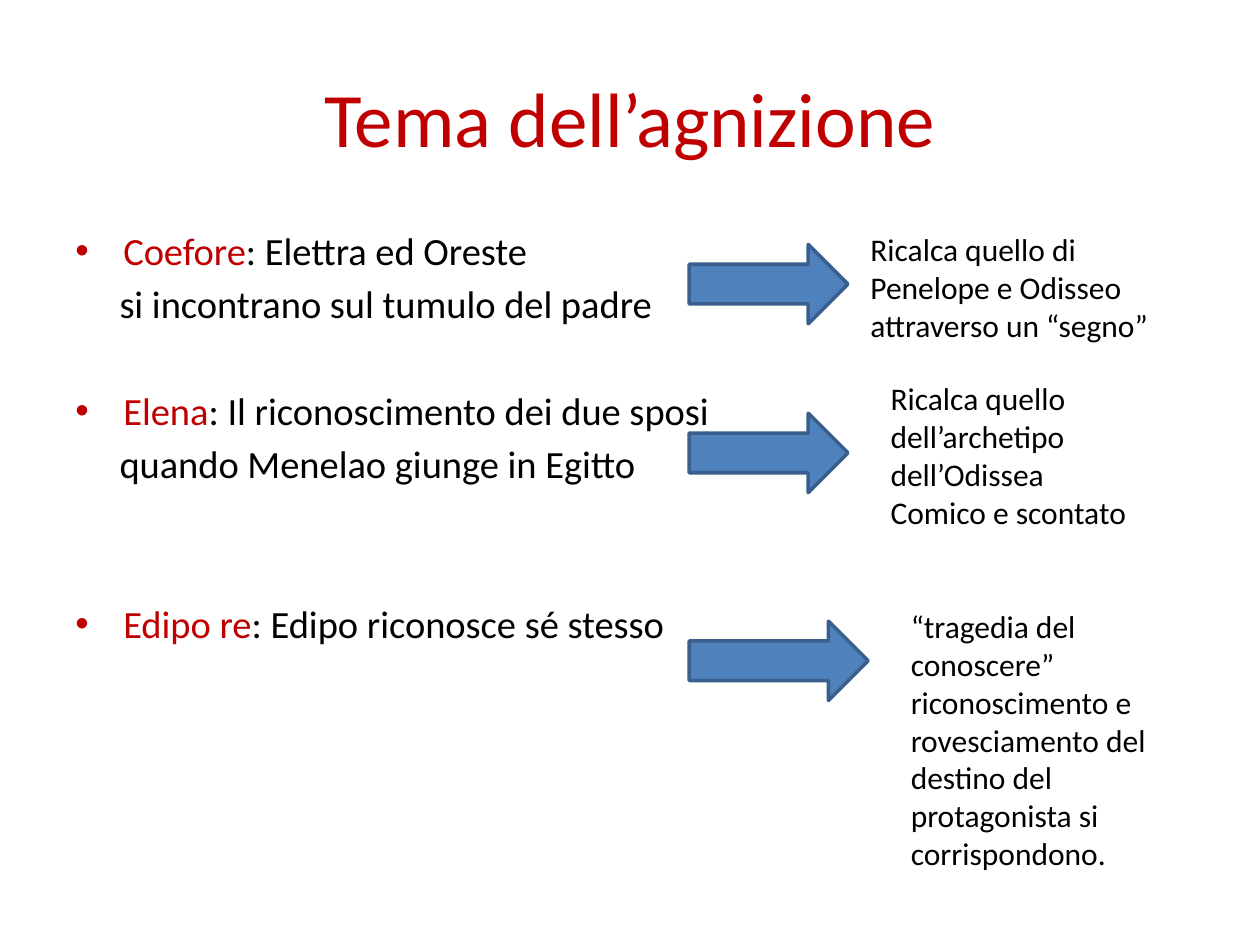
from dataclasses import dataclass

from lxml import etree
from pptx import Presentation
from pptx.dml.color import RGBColor
from pptx.enum.shapes import MSO_SHAPE
from pptx.enum.text import MSO_ANCHOR, PP_ALIGN
from pptx.oxml.ns import qn
from pptx.util import Inches, Pt

RIGHT_ARROW = MSO_SHAPE.RIGHT_ARROW
TOP, MIDDLE = MSO_ANCHOR.TOP, MSO_ANCHOR.MIDDLE
LEFT, CENTER = PP_ALIGN.LEFT, PP_ALIGN.CENTER


@dataclass(frozen=True)
class Theme:
    font: str = "Calibri"
    accent: str = "C00000"
    text: str = "000000"
    arrow_fill: str = "4F81BD"
    arrow_line: str = "3A5F8C"
    title_size: float = 44
    body_size: float = 22
    note_size: float = 18
    line_gap: float = 3.9
    line_pitch: float = 30.8


@dataclass(frozen=True)
class Box:
    left: float
    top: float
    width: float
    height: float

    def lengths(self):
        return [Inches(v) for v in (self.left, self.top, self.width, self.height)]


@dataclass(frozen=True)
class Line:
    runs: tuple
    bullet: bool = False
    indent: float = 0
    before: float = 0


@dataclass(frozen=True)
class Tragedy:
    name: str
    scene: tuple
    lines_above: int
    arrow: Box
    note: tuple
    note_box: Box


THEME = Theme()
TRAGEDIES = (
    Tragedy("Coefore", (": Elettra ed Oreste", "si incontrano sul tumulo del padre"), 0,
            Box(5.47, 1.94, 1.26, 0.63),
            ("Ricalca quello di Penelope e Odisseo attraverso un “segno”",),
            Box(6.81, 1.78, 2.44, 1.01)),
    Tragedy("Elena", (": Il riconoscimento dei due sposi", "quando Menelao giunge in Egitto"), 1,
            Box(5.47, 3.28, 1.26, 0.63),
            ("Ricalca quello dell’archetipo dell’Odissea", "Comico e scontato"),
            Box(6.97, 2.96, 2.36, 1.31)),
    Tragedy("Edipo re", (": Edipo riconosce sé stesso",), 2,
            Box(5.47, 4.93, 1.42, 0.63),
            ("“tragedia del conoscere” riconoscimento e rovesciamento del destino"
             " del protagonista si corrispondono.",),
            Box(7.13, 4.77, 2.28, 2.22)),
)


def add_bullet(paragraph, indent: float) -> None:
    props = paragraph._p.get_or_add_pPr()
    props.set("indent", str(-Inches(indent)))
    etree.SubElement(props, qn("a:buFont"), typeface="Arial")
    etree.SubElement(props, qn("a:buChar"), char="•")


def add_text(slide, box: Box, lines: list, *, size: float,
             align=LEFT, anchor=TOP) -> None:
    frame = slide.shapes.add_textbox(*box.lengths()).text_frame
    frame.word_wrap = True
    frame.vertical_anchor = anchor
    for index, line in enumerate(lines):
        paragraph = frame.paragraphs[0] if index == 0 else frame.add_paragraph()
        paragraph.alignment = align
        if line.before:
            paragraph.space_before = Pt(line.before)
        if line.indent:
            paragraph._p.get_or_add_pPr().set("marL", str(Inches(line.indent)))
        if line.bullet:
            add_bullet(paragraph, line.indent)
        for words, color in line.runs:
            run = paragraph.add_run()
            run.text = words
            run.font.name = THEME.font
            run.font.size = Pt(size)
            run.font.color.rgb = RGBColor.from_string(color)


def add_arrow(slide, box: Box) -> None:
    arrow = slide.shapes.add_shape(RIGHT_ARROW, *box.lengths())
    arrow.shadow.inherit = False
    arrow.fill.solid()
    arrow.fill.fore_color.rgb = RGBColor.from_string(THEME.arrow_fill)
    arrow.line.color.rgb = RGBColor.from_string(THEME.arrow_line)
    arrow.line.width = Pt(2)


def tragedy_lines(tragedy: Tragedy) -> list:
    opening, *rest = tragedy.scene
    before = THEME.line_gap + tragedy.lines_above * THEME.line_pitch
    heading = Line(((tragedy.name, THEME.accent), (opening, THEME.text)), bullet=True,
                   indent=0.38, before=before if tragedy is not TRAGEDIES[0] else 0)
    return [heading] + [Line(((words, THEME.text),), indent=0.35, before=THEME.line_gap)
                        for words in rest]


def main() -> None:
    deck = Presentation()
    deck.slide_width, deck.slide_height = Inches(10), Inches(7.5)
    slide = deck.slides.add_slide(deck.slide_layouts[6])
    add_text(slide, Box(0.5, 0.3, 9, 1.25),
             [Line((("Tema dell’agnizione", THEME.accent),))],
             size=THEME.title_size, align=CENTER, anchor=MIDDLE)
    add_text(slide, Box(0.5, 1.75, 7.02, 4.95),
             [line for tragedy in TRAGEDIES for line in tragedy_lines(tragedy)],
             size=THEME.body_size)
    for tragedy in TRAGEDIES:
        add_arrow(slide, tragedy.arrow)
        add_text(slide, tragedy.note_box,
                 [Line(((words, THEME.text),)) for words in tragedy.note],
                 size=THEME.note_size)
    deck.save("out.pptx")


if __name__ == "__main__":
    main()
